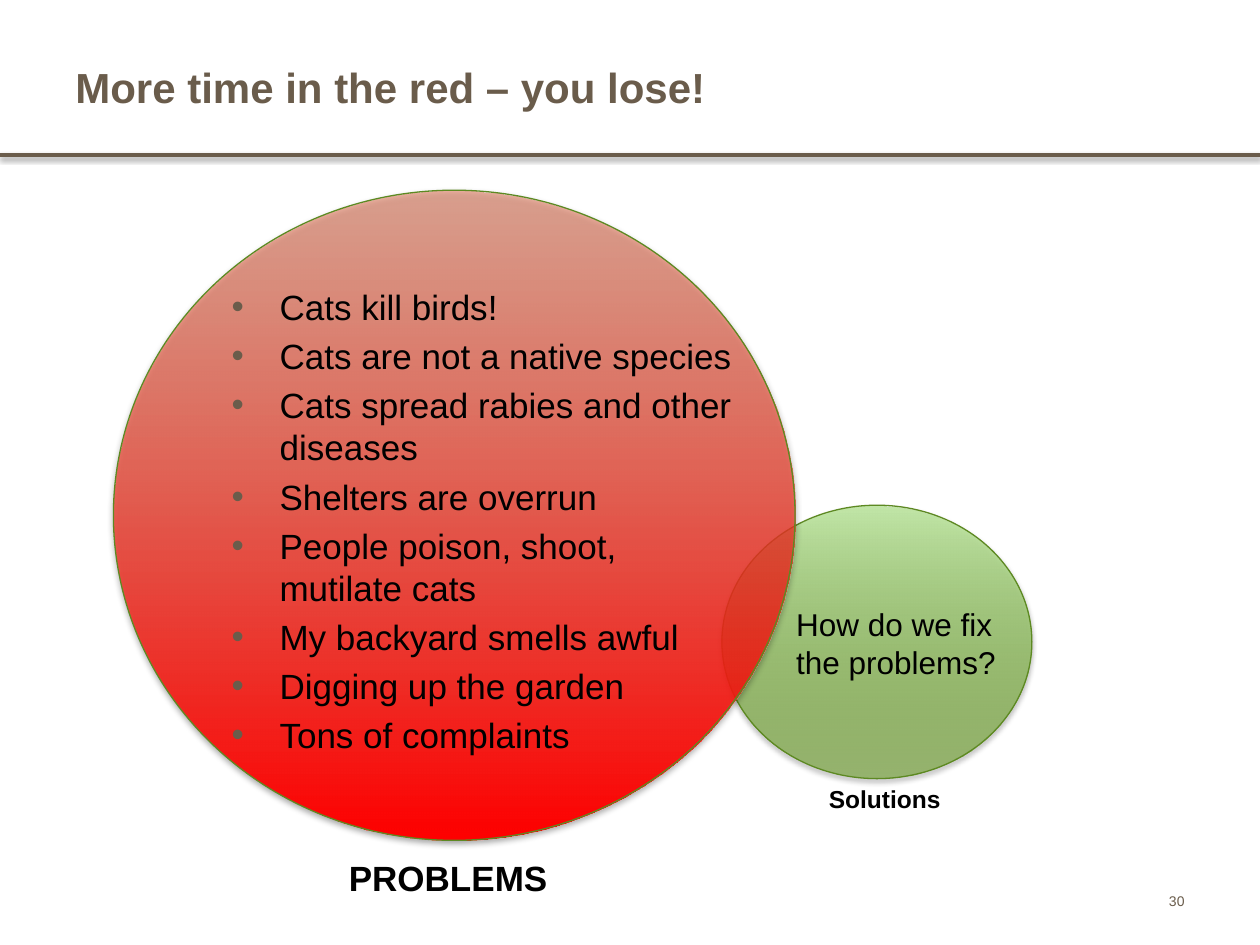
from lxml import etree
from pptx import Presentation
from pptx.dml.color import RGBColor
from pptx.enum.shapes import MSO_CONNECTOR as Conn, MSO_SHAPE as Shape
from pptx.enum.text import MSO_ANCHOR as Anchor, PP_ALIGN as Align
from pptx.oxml import parse_xml
from pptx.oxml.ns import nsdecls, qn
from pptx.util import Inches, Pt

BROWN = RGBColor(0x6A, 0x5C, 0x4B)
BLACK = RGBColor(0, 0, 0)
LEAF = RGBColor(0x5D, 0x89, 0x22)
MOSS = RGBColor(0x61, 0x99, 0x16)
MINT = RGBColor(0xC1, 0xE6, 0xA7)
RED = RGBColor(0xFF, 0, 0)
CORAL = RGBColor(0xE0, 0x73, 0x53)

WIDTH, HEIGHT = 10, 7.5
RULE_Y = 1.23

PROBLEMS = [
    "Cats kill birds!",
    "Cats are not a native species",
    "Cats spread rabies and other diseases",
    "Shelters are overrun",
    "People poison, shoot, mutilate cats",
    "My backyard smells awful",
    "Digging up the garden",
    "Tons of complaints",
]
CIRCLES = [
    ((5.73, 4.01, 2.46, 2.17), [(MOSS, 52), (MINT, 100)]),
    ((0.9, 1.51, 5.41, 5.16), [(RED, 100), (CORAL, 53)]),
]
TITLE = dict(size=Pt(24), bold=True, color=BROWN, anchor=Anchor.MIDDLE)
BULLETS = dict(size=Pt(20), bullet=True)
NUMBER = dict(size=Pt(8), color=BROWN, anchor=Anchor.MIDDLE, align=Align.RIGHT)
TEXTS = [
    ((0.5, 0.27, 7.16, 0.83), ["More time in the red – you lose!"], TITLE),
    ((1.74, 2.22, 4.21, 3.38), PROBLEMS, BULLETS),
    ((7.17, 6.95, 2.33, 0.4), ["30"], NUMBER),
    ((6.22, 4.75, 1.88, 0.71), ["How do we fix the problems?"], dict(size=Pt(18))),
    ((2.67, 6.75, 1.9, 0.44), ["PROBLEMS"], dict(size=Pt(20), bold=True)),
    ((6.48, 6.17, 1.63, 0.34), ["Solutions"], dict(size=Pt(14), bold=True)),
]


def add_shadow(sp, distance, alpha):
    sp._element.spPr.append(parse_xml(
        f'<a:effectLst {nsdecls("a")}><a:outerShdw blurRad="{Pt(3.1)}" dist="{Pt(distance)}" '
        f'dir="5400000" rotWithShape="0"><a:srgbClr val="{BLACK}">'
        f'<a:alpha val="{alpha * 1000}"/></a:srgbClr></a:outerShdw></a:effectLst>'))


def set_line(sp, color, width):
    sp.line.color.rgb = color
    sp.line.width = Pt(width)


def add_circle(s, box, stops):
    sp = s.shapes.add_shape(Shape.OVAL, *map(Inches, box))
    sp.fill.gradient()
    sp.fill.gradient_angle = 90
    for stop, (color, alpha) in zip(sp.fill.gradient_stops, stops):
        stop.color.rgb = color
        clr = stop._gs.find(qn("a:srgbClr"))
        etree.SubElement(clr, qn("a:alpha"), val=str(alpha * 1000))
    set_line(sp, LEAF, 0.75)
    add_shadow(sp, 1.8, 35)


def add_bullet(p):
    indent = Inches(0.38)
    pPr = p._p.get_or_add_pPr()
    pPr.set("marL", str(indent))
    pPr.set("indent", str(-indent))
    color = etree.SubElement(pPr, qn("a:buClr"))
    etree.SubElement(color, qn("a:srgbClr"), val=str(BROWN))
    etree.SubElement(pPr, qn("a:buFont"), typeface="Arial")
    etree.SubElement(pPr, qn("a:buChar"), char="•")


def add_text(s, box, lines, style):
    tf = s.shapes.add_textbox(*map(Inches, box)).text_frame
    tf.word_wrap = True
    tf.vertical_anchor = style.get("anchor", Anchor.TOP)
    for i, line in enumerate(lines):
        p = tf.paragraphs[0] if i == 0 else tf.add_paragraph()
        p.alignment = style.get("align", Align.LEFT)
        if style.get("bullet"):
            add_bullet(p)
        if i:
            p.space_before = Pt(4)
        r = p.add_run()
        r.text = line
        font = dict(name="Arial", size=style["size"], bold=style.get("bold", False))
        for name, value in font.items():
            setattr(r.font, name, value)
        r.font.color.rgb = style.get("color", BLACK)


def main():
    prs = Presentation()
    prs.slide_width, prs.slide_height = Inches(WIDTH), Inches(HEIGHT)
    s = prs.slides.add_slide(prs.slide_layouts[6])
    y = Inches(RULE_Y)
    rule = s.shapes.add_connector(Conn.STRAIGHT, 0, y, prs.slide_width, y)
    set_line(rule, BROWN, 2)
    add_shadow(rule, 1.6, 38)
    for box, stops in CIRCLES:
        add_circle(s, box, stops)
    for box, lines, style in TEXTS:
        add_text(s, box, lines, style)
    prs.save("out.pptx")


if __name__ == "__main__":
    main()
